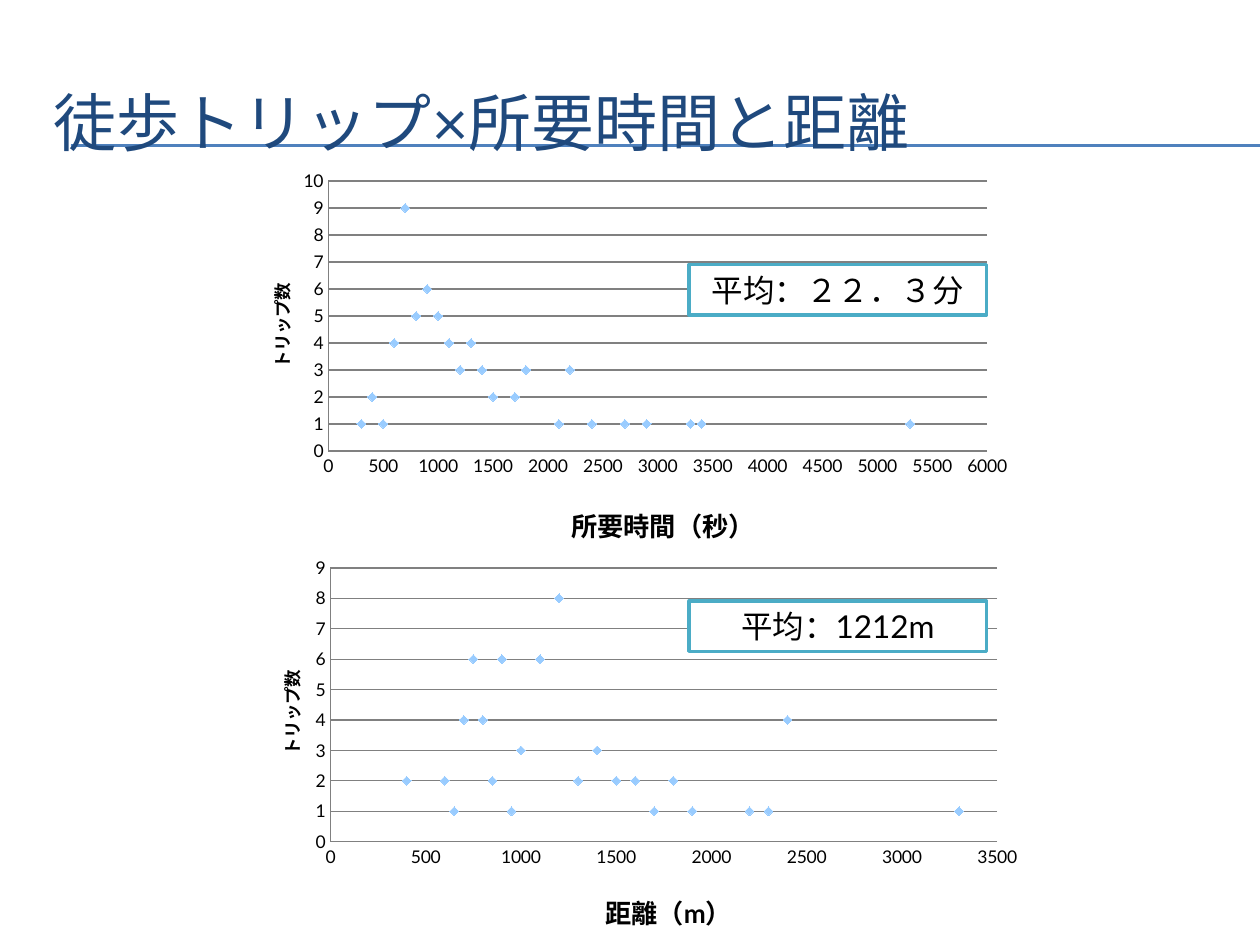
from pptx import Presentation
from pptx.chart.data import XyChartData
from pptx.dml.color import RGBColor
from pptx.enum.chart import XL_CHART_TYPE as ChartType, XL_MARKER_STYLE as Marker, XL_TICK_MARK as Tick
from pptx.enum.shapes import MSO_CONNECTOR as Connector, MSO_SHAPE as Shape
from pptx.enum.text import MSO_ANCHOR as Anchor, PP_ALIGN as Align
from pptx.oxml.ns import qn
from pptx.util import Inches, Pt
from lxml import etree

FONT = "Lato"
BLACK, GRAY, NAVY, BLUE, TEAL, SKY = "000000", "808080", "1F497D", "4F81BD", "4BACC6", "99CCFF"

TIME_POINTS = list(zip(
    [300, 400, 500, 600, 700, 800, 900, 1000, 1100, 1200, 1300, 1400, 1500, 1700,
     1800, 2100, 2200, 2400, 2700, 2900, 3300, 3400, 5300],
    [1, 2, 1, 4, 9, 5, 6, 5, 4, 3, 4, 3, 2, 2, 3, 1, 3, 1, 1, 1, 1, 1, 1]))
DISTANCE_POINTS = list(zip(
    [400, 600, 650, 700, 750, 800, 850, 900, 950, 1000, 1100, 1200, 1300, 1400,
     1500, 1600, 1700, 1800, 1900, 2200, 2300, 2400, 3300],
    [2, 2, 1, 4, 6, 4, 2, 6, 1, 3, 6, 8, 2, 3, 2, 2, 1, 2, 1, 1, 1, 4, 1]))


def color(value):
    """Turn a hex string into a colour."""
    return RGBColor.from_string(value)


def style_font(font, size, value=BLACK, bold=False):
    """Set the typeface, size, colour and weight of a font."""
    font.name, font.size, font.bold = FONT, Pt(size), bold
    font.color.rgb = color(value)


def add_run(para, text, size, value=BLACK, bold=False):
    """Append a styled run to a paragraph."""
    span = para.add_run()
    span.text = text
    style_font(span.font, size, value, bold)


def add_rule(page, top):
    """Draw a thin line from the title to the right edge."""
    rule = page.shapes.add_connector(
        Connector.STRAIGHT, Inches(0.56), Inches(top), Inches(10), Inches(top))
    rule.line.color.rgb = color(BLUE)
    rule.line.width = Pt(0.75)
    etree.SubElement(rule._element.spPr, qn("a:effectLst"))


def add_title(page, text):
    """Add the slide title."""
    box = page.shapes.add_textbox(Inches(0.33), Inches(0.5), Inches(9.5), Inches(0.92))
    frame = box.text_frame
    frame.word_wrap = True
    frame.vertical_anchor = Anchor.MIDDLE
    add_run(frame.paragraphs[0], text, 36, NAVY)


def add_average(page, top, text):
    """Add an outlined box that states an average."""
    box = page.shapes.add_shape(
        Shape.RECTANGLE, Inches(5.47), Inches(top), Inches(2.36), Inches(0.4))
    box.shadow.inherit = False
    box.fill.solid()
    box.fill.fore_color.rgb = color("FFFFFF")
    box.line.color.rgb = color(TEAL)
    box.line.width = Pt(2)
    box.text_frame.word_wrap = True
    para = box.text_frame.paragraphs[0]
    para.alignment = Align.CENTER
    add_run(para, text, 18)


def place(parent, index, **settings):
    """Give a chart part a manual layout in fractions of the chart."""
    for old in parent.findall(qn("c:layout")):
        parent.remove(old)
    layout = etree.Element(qn("c:layout"))
    manual = etree.SubElement(layout, qn("c:manualLayout"))
    for name, value in settings.items():
        etree.SubElement(manual, qn("c:" + name)).set("val", str(value))
    parent.insert(index, layout)


def style_axis(axis, maximum, step, title, size, left, top):
    """Set the scale, line and title of an axis."""
    axis.minimum_scale, axis.maximum_scale, axis.major_unit = 0, maximum, step
    axis.major_tick_mark = axis.minor_tick_mark = Tick.NONE
    axis.format.line.color.rgb = color(GRAY)
    axis.format.line.width = Pt(0.75)
    style_font(axis.tick_labels.font, 10)
    add_run(axis.axis_title.text_frame.paragraphs[0], title, size, bold=True)
    place(axis.axis_title._element, 1, xMode="edge", yMode="edge", x=left, y=top)


def add_scatter(page, left, top, points, x_axis, y_max, plot):
    """Add a scatter chart of trip counts."""
    data = XyChartData()
    series_data = data.add_series("Series 1")
    for x, y in points:
        series_data.add_data_point(x, y)
    chart = page.shapes.add_chart(
        ChartType.XY_SCATTER, Inches(left), Inches(top), Inches(6.3), Inches(3.15), data).chart
    chart.has_legend = chart.has_title = False
    style_font(chart.font, 10)
    chart.plots[0].vary_by_categories = False

    series = chart.plots[0].series[0]
    series.smooth = False
    series.format.line.fill.background()
    series.marker.style, series.marker.size = Marker.DIAMOND, 5
    series.marker.format.fill.solid()
    series.marker.format.fill.fore_color.rgb = color(SKY)
    series.marker.format.line.color.rgb = color(SKY)

    x_max, title, title_left = x_axis
    style_axis(chart.category_axis, x_max, 500, title, 15, title_left, 0.85)
    chart.category_axis.has_major_gridlines = False
    style_axis(chart.value_axis, y_max, 1, "トリップ数", 10, 0.04, 0.3)
    chart.value_axis.axis_title.text_frame._txBody.bodyPr.set("rot", "-5400000")
    grid = chart.value_axis.major_gridlines.format.line
    grid.color.rgb = color(GRAY)
    grid.width = Pt(0.75)
    plot_left, width, height = plot
    place(chart._chartSpace.chart.plotArea, 0, layoutTarget="inner", xMode="edge",
          yMode="edge", x=plot_left, y=0.05, w=width, h=height)


def main():
    """Build the slide and save it."""
    deck = Presentation()
    deck.slide_width, deck.slide_height = Inches(10), Inches(7.5)
    page = deck.slides.add_slide(deck.slide_layouts[6])
    for top in (1.15, 1.16):
        add_rule(page, top)
    add_title(page, "徒歩トリップ×所要時間と距離")
    add_scatter(page, 1.85, 1.28, TIME_POINTS, (6000, "所要時間（秒）", 0.42), 10,
                (0.12, 0.83, 0.68))
    add_scatter(page, 1.93, 4.35, DISTANCE_POINTS, (3500, "距離（m）", 0.45), 9,
                (0.11, 0.84, 0.69))
    add_average(page, 2.1, "平均：２２．３分")
    add_average(page, 4.77, "平均：1212m")
    deck.save("out.pptx")


if __name__ == "__main__":
    main()
